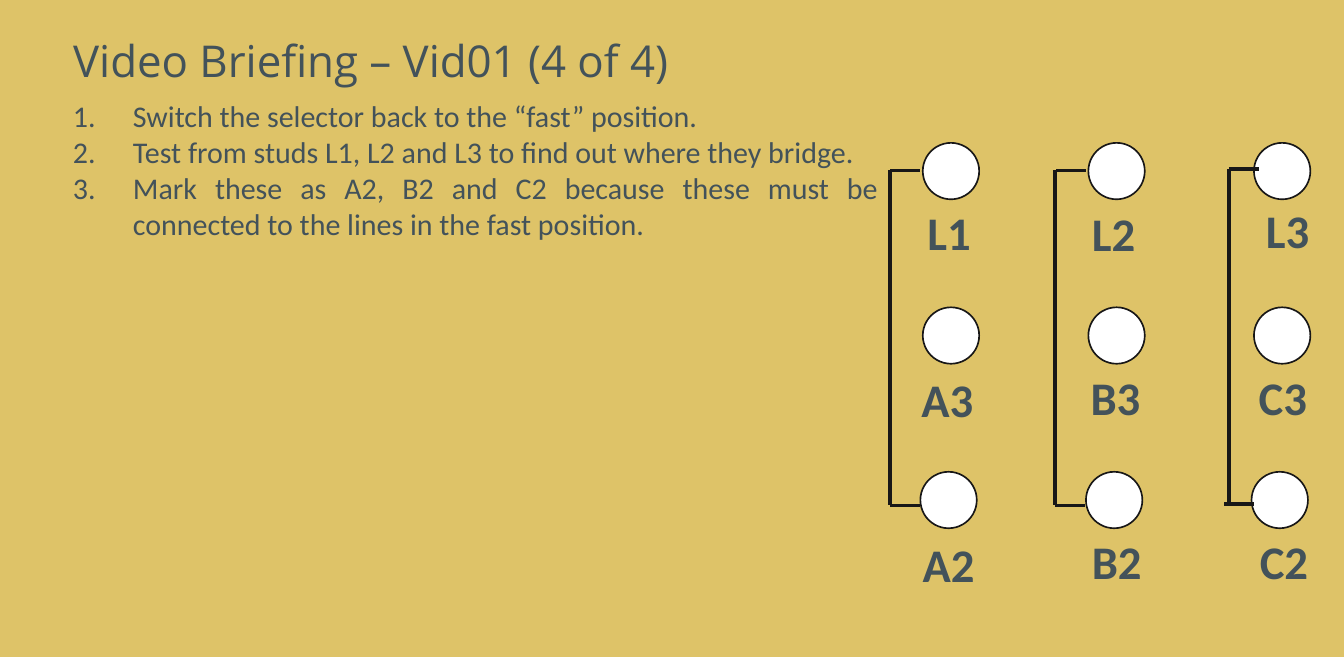
"""Build the Video Briefing slide with its numbered steps and stud diagram."""
from dataclasses import dataclass

from lxml import etree
from pptx import Presentation
from pptx.dml.color import RGBColor
from pptx.enum.shapes import MSO_CONNECTOR, MSO_SHAPE
from pptx.enum.text import MSO_ANCHOR, MSO_AUTO_SIZE, PP_ALIGN
from pptx.oxml.ns import qn
from pptx.util import Inches, Pt

OVAL, STRAIGHT = MSO_SHAPE.OVAL, MSO_CONNECTOR.STRAIGHT
MIDDLE, TOP = MSO_ANCHOR.MIDDLE, MSO_ANCHOR.TOP
LEFT, JUSTIFY = PP_ALIGN.LEFT, PP_ALIGN.JUSTIFY
GROW, FIXED = MSO_AUTO_SIZE.SHAPE_TO_FIT_TEXT, MSO_AUTO_SIZE.NONE
TITLE_ONLY = 5


@dataclass(frozen=True)
class Theme:
    background: RGBColor = RGBColor(0xDE, 0xC3, 0x68)
    ink: RGBColor = RGBColor(0x43, 0x52, 0x5A)
    line: RGBColor = RGBColor(0x18, 0x17, 0x17)
    stud: RGBColor = RGBColor(0xFF, 0xFF, 0xFF)
    title_font: str = "Open Sans"
    body_font: str = "Calibri"
    title_size: float = 26.3
    body_size: float = 18
    label_size: float = 28
    stud_line: float = 1
    wire_line: float = 2.25


THEME = Theme()
TITLE = "Video Briefing – Vid01 (4 of 4)"
STEPS = [
    "Switch the selector back to the “fast” position.",
    "Test from studs L1, L2 and L3 to find out where they bridge.",
    "Mark these as A2, B2 and C2 because these must be connected to the lines in the fast position.",
]
STUD_ROWS = [
    {"shift": 0, "labels": [("L1", -0.06, 0), ("L2", -0.07, 0.01), ("L3", 0, -0.02)]},
    {"shift": 0, "labels": [("A3", -0.11, 0.02), ("B3", -0.08, 0), ("C3", -0.06, 0)]},
    {"shift": -0.02, "labels": [("A2", -0.1, 0.02), ("B2", -0.07, 0), ("C2", -0.05, 0)]},
]
LABEL_WIDTHS = {"L": 0.58, "A": 0.65, "B": 0.63, "C": 0.62}
BRACKETS = [
    {"spine": 7.42, "top": (7.42, 1.42), "bottom": (7.42, 4.21)},
    {"spine": 8.79, "top": (8.8, 1.42), "bottom": (8.79, 4.21)},
    {"spine": 10.24, "top": (10.24, 1.41), "bottom": (10.2, 4.2)},
]

SLIDE_WIDTH, SLIDE_HEIGHT = Inches(11.2), Pt(394)
MARGIN = 0.51
GRID_LEFT, GRID_TOP = 7.69, 1.19
COLUMN_STEP, ROW_STEP = 1.38, 1.37
STUD_SIZE = 0.47
LABEL_HEIGHT, LABEL_DROP = 0.57, 0.46
BRACKET_ARM, BRACKET_END = 0.25, 4.21
STEP_INDENT = 0.5


def write_text(box, lines, *, size, font=THEME.body_font, bold=False, align=LEFT,
               anchor=TOP, wrap=True, fit=FIXED, spacing=1.0):
    frame = box.text_frame
    frame.text = "\n".join(lines)
    frame.word_wrap, frame.auto_size, frame.vertical_anchor = wrap, fit, anchor
    for para in frame.paragraphs:
        para.alignment, para.line_spacing = align, spacing
        for span in para.runs:
            span.font.name, span.font.size, span.font.bold = font, Pt(size), bold
            span.font.color.rgb = THEME.ink
    return frame


def place(shape, left, top, width, height):
    shape.left, shape.top = Inches(left), Inches(top)
    shape.width, shape.height = Inches(width), Inches(height)


def add_box(page, left, top, width, height):
    return page.shapes.add_textbox(*map(Inches, (left, top, width, height)))


def number_paragraphs(frame):
    for para in frame.paragraphs:
        properties = para._p.get_or_add_pPr()
        properties.set("marL", str(Inches(STEP_INDENT)))
        properties.set("indent", str(-Inches(STEP_INDENT)))
        etree.SubElement(properties, qn("a:buFont"), typeface="+mj-lt")
        etree.SubElement(properties, qn("a:buAutoNum"), type="arabicPeriod")


def add_stud(page, left, top):
    stud = page.shapes.add_shape(OVAL, *map(Inches, (left, top, STUD_SIZE, STUD_SIZE)))
    stud.shadow.inherit = False
    stud.fill.solid()
    stud.fill.fore_color.rgb = THEME.stud
    stud.line.color.rgb = THEME.line
    stud.line.width = Pt(THEME.stud_line)


def add_wire(page, start, end):
    wire = page.shapes.add_connector(STRAIGHT, *map(Inches, (*start, *end)))
    wire.line.color.rgb = THEME.line
    wire.line.width = Pt(THEME.wire_line)
    etree.SubElement(wire._element.spPr, qn("a:effectLst"))


def add_stud_grid(page):
    for row, stud_row in enumerate(STUD_ROWS):
        top = GRID_TOP + row * ROW_STEP
        for column, (label, across, down) in enumerate(stud_row["labels"]):
            left = GRID_LEFT + column * COLUMN_STEP
            add_stud(page, left + stud_row["shift"], top)
            box = add_box(page, left + across, top + LABEL_DROP + down,
                          LABEL_WIDTHS[label[0]], LABEL_HEIGHT)
            write_text(box, [label], size=THEME.label_size, bold=True, wrap=False, fit=GROW)


def add_brackets(page):
    for bracket in BRACKETS:
        spine = bracket["spine"]
        add_wire(page, (spine, bracket["top"][1]), (spine, BRACKET_END))
        for left, level in (bracket["top"], bracket["bottom"]):
            add_wire(page, (left, level), (left + BRACKET_ARM, level))


def main():
    deck = Presentation()
    deck.slide_width, deck.slide_height = SLIDE_WIDTH, SLIDE_HEIGHT
    page = deck.slides.add_slide(deck.slide_layouts[TITLE_ONLY])
    page.background.fill.solid()
    page.background.fill.fore_color.rgb = THEME.background

    title = page.shapes.title
    place(title, MARGIN, 0, 9.66, 1.06)
    write_text(title, [TITLE], size=THEME.title_size, font=THEME.title_font,
               anchor=MIDDLE, spacing=0.9)
    steps = add_box(page, MARGIN, 0.76, 6.91, 1.31)
    number_paragraphs(write_text(steps, STEPS, size=THEME.body_size, align=JUSTIFY, fit=GROW))

    add_stud_grid(page)
    add_brackets(page)
    deck.save("out.pptx")


if __name__ == "__main__":
    main()
